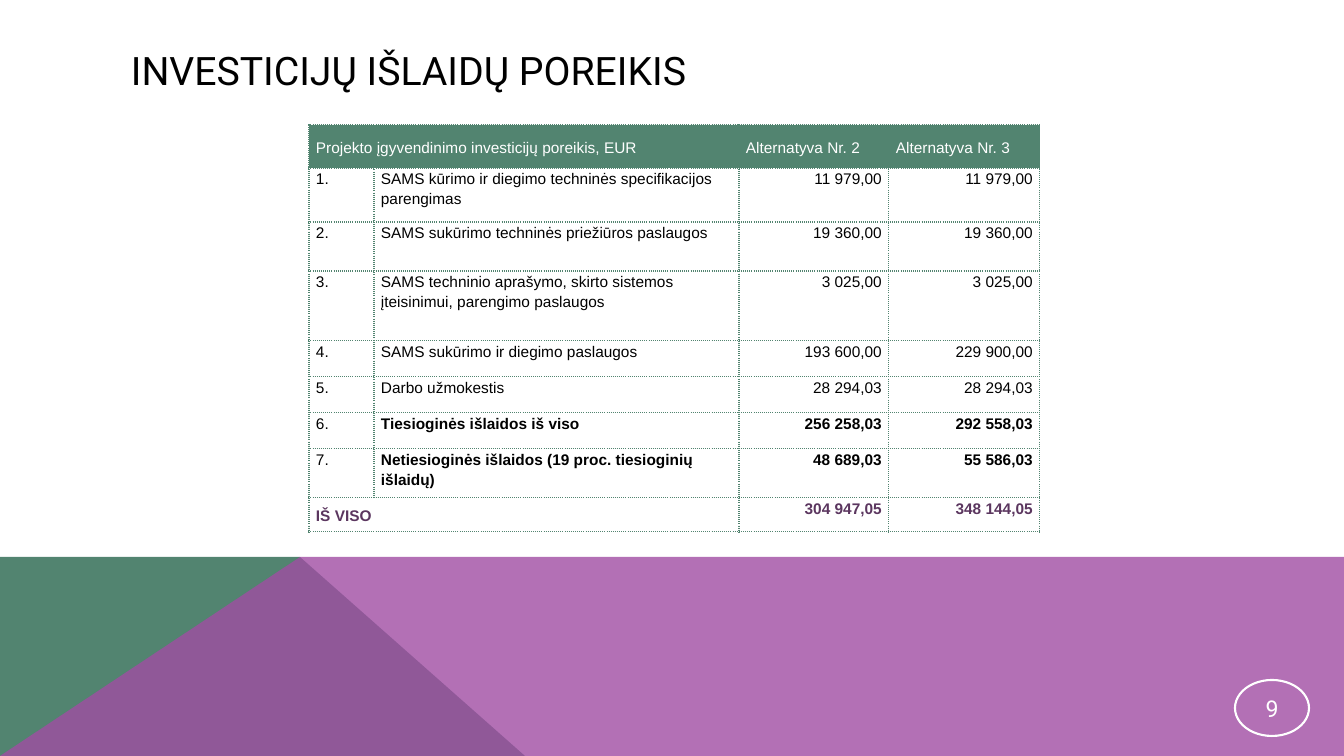
from lxml.etree import SubElement as Sub
from pptx import Presentation
from pptx.dml.color import RGBColor as RGB
from pptx.enum.shapes import MSO_SHAPE as SHAPE
from pptx.enum.text import MSO_ANCHOR as ANCHOR, PP_ALIGN as ALIGN
from pptx.oxml.ns import qn
from pptx.util import Emu, Pt

SCALE = 914400 / 100.8
WHITE = RGB(0xFF, 0xFF, 0xFF)
BLACK = RGB(0, 0, 0)
GREEN = RGB(0x52, 0x84, 0x70)
PURPLE = RGB(0xA0, 0x4D, 0xA3)
PLUM = RGB(0x5B, 0x36, 0x5F)

COLS = [65, 365, 150, 151]
SIZES = [43, 54, 49, 70, 36, 36, 36, 49, 34]
HEAD = ["Projekto įgyvendinimo investicijų poreikis, EUR", "", "Alternatyva Nr. 2", "Alternatyva Nr. 3"]
COSTS = [
    ["SAMS kūrimo ir diegimo techninės specifikacijos parengimas", "11 979,00", "11 979,00"],
    ["SAMS sukūrimo techninės priežiūros paslaugos", "19 360,00", "19 360,00"],
    ["SAMS techninio aprašymo, skirto sistemos įteisinimui, parengimo paslaugos", "3 025,00", "3 025,00"],
    ["SAMS sukūrimo ir diegimo paslaugos", "193 600,00", "229 900,00"],
    ["Darbo užmokestis", "28 294,03", "28 294,03"],
    ["Tiesioginės išlaidos iš viso", "256 258,03", "292 558,03"],
    ["Netiesioginės išlaidos (19 proc. tiesioginių išlaidų)", "48 689,03", "55 586,03"],
]
TOTAL = ["IŠ VISO", "", "304 947,05", "348 144,05"]


def px(n):
    return Emu(round(n * SCALE))


def apply(item, form):
    for name, value in form.items():
        setattr(item, name, value)


def write(frame, text, size, color, font="Roboto", bold=False, **form):
    para = frame.paragraphs[0]
    apply(para, form)
    run = para.add_run()
    run.text = text
    apply(run.font, {"name": font, "size": Pt(size), "bold": bold})
    run.font.color.rgb = color


def add_area(slide, points, color, alpha=100):
    start, *rest = points
    pen = slide.shapes.build_freeform(*start, scale=SCALE)
    pen.add_line_segments(rest, close=True)
    area = pen.convert_to_shape()
    area.shadow.inherit = False
    area.fill.solid()
    area.fill.fore_color.rgb = color
    area.line.fill.background()
    if alpha < 100:
        tint = area.fill._xPr.find(qn("a:solidFill"))[0]
        Sub(tint, qn("a:alpha"), val=str(alpha * 1000))


def add_title(slide, text):
    box = slide.shapes.add_textbox(px(121), px(40), px(1106), px(60))
    apply(box.text_frame, {"word_wrap": True, "vertical_anchor": ANCHOR.MIDDLE})
    write(box.text_frame, text, 28, BLACK)


def add_badge(slide, text):
    badge = slide.shapes.add_shape(SHAPE.OVAL, px(1235), px(680), px(74), px(56))
    badge.shadow.inherit = False
    badge.fill.background()
    badge.line.color.rgb = WHITE
    badge.line.width = Pt(1.5)
    sides = ("left", "top", "right", "bottom")
    apply(badge.text_frame, {f"margin_{side}": px(1) for side in sides})
    badge.text_frame.vertical_anchor = ANCHOR.MIDDLE
    write(badge.text_frame, text, 16.5, WHITE, alignment=ALIGN.CENTER)


def add_edges(cell):
    props = cell._tc.get_or_add_tcPr()
    for side in "LRTB":
        edge = Sub(props, qn(f"a:ln{side}"), w=str(Pt(1)))
        fill = Sub(edge, qn("a:solidFill"))
        Sub(fill, qn("a:srgbClr"), val=str(GREEN))
        Sub(edge, qn("a:prstDash"), val="sysDot")


def fill_cell(cell, text, row, col):
    first, last = row == 0, row == len(SIZES) - 1
    label = first or (last and col < 2)
    add_edges(cell)
    cell.fill.solid()
    cell.fill.fore_color.rgb = GREEN if first else WHITE
    apply(cell, {
        "margin_left": px(7), "margin_right": px(7), "margin_top": 0, "margin_bottom": 0,
        "vertical_anchor": ANCHOR.MIDDLE if label else ANCHOR.TOP,
    })
    if not text:
        return
    write(
        cell.text_frame, text, 11,
        WHITE if first else PLUM if last else BLACK,
        font="Arial",
        bold=last or (row >= 6 and col > 0),
        alignment=ALIGN.RIGHT if col > 1 and not first else ALIGN.LEFT,
        line_spacing=1.15,
        space_before=Pt(0 if label else 3),
        space_after=Pt(10 if label else 3),
    )


def add_costs(slide):
    rows = [HEAD, *([f"{n}.", *cost] for n, cost in enumerate(COSTS, 1)), TOTAL]
    frame = slide.shapes.add_table(
        len(SIZES), len(COLS), px(309), px(125), px(sum(COLS)), px(sum(SIZES)))
    table = frame.table
    apply(table, {"first_row": False, "horz_banding": False})
    for col, width in zip(table.columns, COLS):
        col.width = px(width)
    for row, height in zip(table.rows, SIZES):
        row.height = px(height)
    for r, texts in enumerate(rows):
        for c, text in enumerate(texts):
            fill_cell(table.cell(r, c), text, r, c)
    for r in (0, len(SIZES) - 1):
        table.cell(r, 0).merge(table.cell(r, 1))


def main():
    deck = Presentation()
    apply(deck, {"slide_width": px(1344), "slide_height": px(756)})
    slide = deck.slides.add_slide(deck.slide_layouts[6])
    add_area(slide, [(0, 756), (0, 557), (300, 557), (525, 756)], GREEN)
    add_area(slide, [(0, 756), (300, 557), (1344, 557), (1344, 756)], PURPLE, 80)
    add_title(slide, "INVESTICIJŲ IŠLAIDŲ POREIKIS")
    add_badge(slide, "9")
    add_costs(slide)
    deck.save("out.pptx")


if __name__ == "__main__":
    main()
